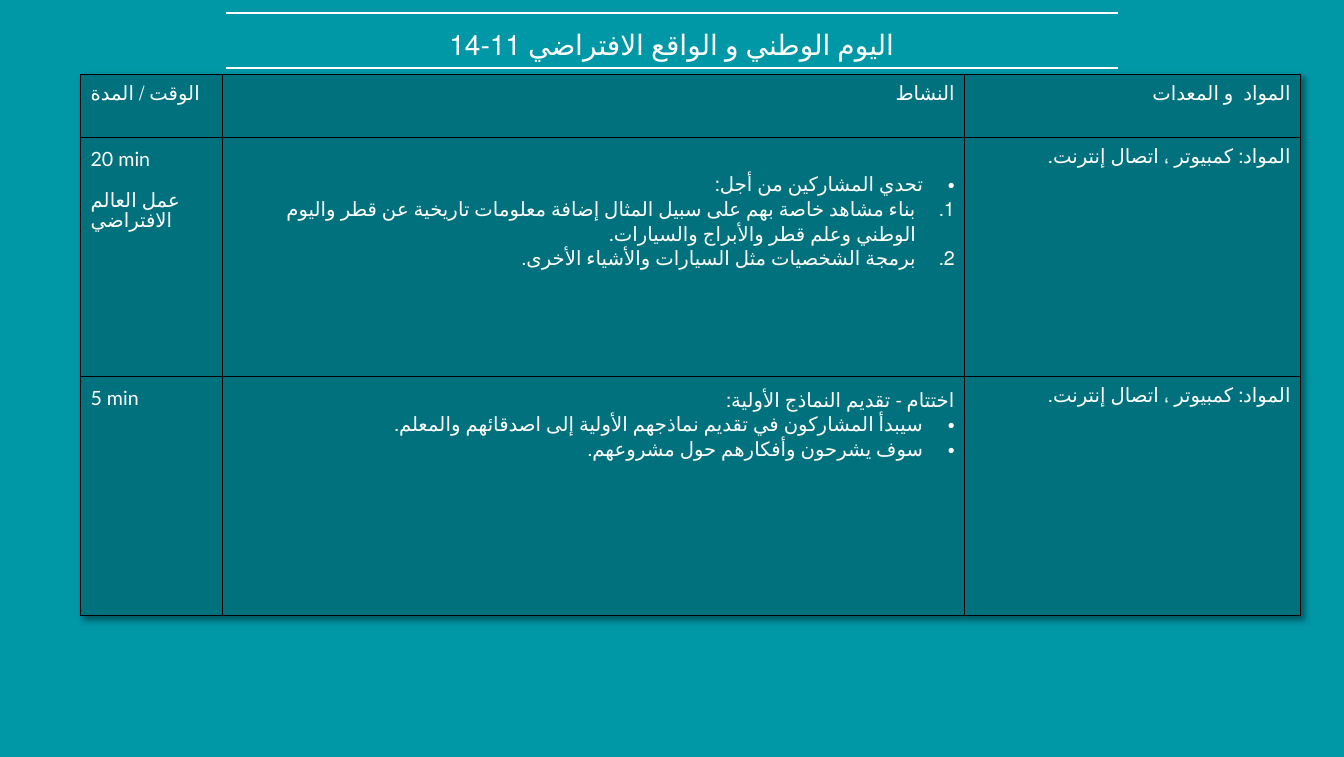
import pptx
import pptx.dml.color
import pptx.enum.shapes
import pptx.enum.text
import pptx.oxml
import pptx.oxml.ns
import pptx.util

Cm = pptx.util.Cm
Pt = pptx.util.Pt
ALIGN = pptx.enum.text.PP_ALIGN
TEAL = pptx.dml.color.RGBColor(0x00, 0x97, 0xA7)
DARK_TEAL = pptx.dml.color.RGBColor(0x00, 0x71, 0x7D)
WHITE = pptx.dml.color.RGBColor(0xFF, 0xFF, 0xFF)
BLACK = pptx.dml.color.RGBColor(0x00, 0x00, 0x00)

BULLET = ('<a:buFont {ns} typeface="Arial"/>', '<a:buChar {ns} char="•"/>')
NUMBER = ('<a:buFont {ns} typeface="Arial"/>', '<a:buAutoNum {ns} type="arabicPeriod"/>')
MARKERS = {"bullet": (BULLET, Cm(0.79)), "number": (NUMBER, Cm(0.97))}
MATERIALS = "المواد: كمبيوتر ، اتصال إنترنت."
HEADINGS = ("الوقت / المدة", "النشاط", "المواد  و المعدات")
SESSIONS = (
    (
        ("20 min", "عمل العالم الافتراضي"),
        (
            ("bullet", "تحدي المشاركين من أجل:"),
            ("number", "بناء مشاهد خاصة بهم على سبيل المثال إضافة معلومات تاريخية عن قطر واليوم "
                       "الوطني وعلم قطر والأبراج والسيارات."),
            ("number", "برمجة الشخصيات مثل السيارات والأشياء الأخرى."),
        ),
        Cm(0.85),
    ),
    (
        ("5 min",),
        (
            (None, "اختتام - تقديم النماذج الأولية:"),
            ("bullet", "سيبدأ المشاركون في تقديم نماذجهم الأولية إلى اصدقائهم والمعلم."),
            ("bullet", "سوف يشرحون وأفكارهم حول مشروعهم."),
        ),
        Cm(0.25),
    ),
)


def make_element(template):
    """Return an XML element in the drawing namespace."""
    return pptx.oxml.parse_xml(template.format(ns=pptx.oxml.ns.nsdecls("a")))


def write_paragraph(paragraph, text, size, font_name="Arial"):
    """Put white text in a paragraph."""
    paragraph.text = text
    for run in paragraph.runs:
        run.font.size = Pt(size)
        run.font.name = font_name
        run.font.color.rgb = WHITE
        run.font._element.set("lang", "ar")


def write_right_to_left(paragraph, text, marker=None):
    """Put right-to-left text in a paragraph, with an optional list marker."""
    properties = paragraph._p.get_or_add_pPr()
    properties.set("rtl", "1")
    properties.set("marR", "0")
    paragraph.alignment = ALIGN.RIGHT
    if marker:
        elements, indent = MARKERS[marker]
        properties.set("marL", str(indent))
        properties.set("indent", str(-indent))
        for element in elements:
            properties.append(make_element(element))
    write_paragraph(paragraph, text, 14)


def cell_paragraphs(cell, count):
    """Return the given number of paragraphs from an empty cell."""
    frame = cell.text_frame
    return [frame.paragraphs[0]] + [frame.add_paragraph() for _ in range(count - 1)]


def style_cell(cell):
    """Give a cell its margins, borders and fill."""
    cell.margin_left = cell.margin_right = cell.margin_top = cell.margin_bottom = Cm(0.25)
    properties = cell._tc.get_or_add_tcPr()
    for side in ("lnL", "lnR", "lnT", "lnB"):
        properties.append(make_element(
            f'<a:{side} {{ns}} w="{Pt(1)}"><a:solidFill><a:srgbClr val="{BLACK}"/>'
            f'</a:solidFill></a:{side}>'))
    cell.fill.solid()
    cell.fill.fore_color.rgb = DARK_TEAL


def add_title(slide, left, top, width, height):
    """Add the centred title between two horizontal rules."""
    box = slide.shapes.add_textbox(left, top, width, height)
    frame = box.text_frame
    frame.word_wrap = True
    frame.margin_left = frame.margin_right = frame.margin_top = frame.margin_bottom = Cm(0.33)
    frame.paragraphs[0].alignment = ALIGN.CENTER
    write_paragraph(frame.paragraphs[0], "اليوم الوطني و الواقع الافتراضي 11-14", 20, "Lato")
    inset = Cm(0.31)
    for rule_top in (top - Cm(0.03), top + Cm(1.35)):
        rule = slide.shapes.add_connector(
            pptx.enum.shapes.MSO_CONNECTOR.STRAIGHT,
            left + inset, rule_top, left + width - inset, rule_top)
        rule.line.color.rgb = WHITE
        rule.line.width = Pt(1.5)
        rule._element.spPr.append(make_element("<a:effectLst {ns}/>"))


def add_schedule(slide, left, top, width, height):
    """Add the table of times, activities and materials."""
    table = slide.shapes.add_table(3, 3, left, top, width, height).table
    table.first_row = table.horz_banding = False
    table._tbl.tblPr.insert(0, make_element(
        '<a:effectLst {ns}><a:outerShdw blurRad="50800" dist="38100" dir="2700000" algn="tl" '
        'rotWithShape="0"><a:prstClr val="black"><a:alpha val="40000"/></a:prstClr>'
        '</a:outerShdw></a:effectLst>'))
    time_width, materials_width = Cm(3.57), Cm(8.46)
    widths = (time_width, width - time_width - materials_width, materials_width)
    for column, column_width in zip(table.columns, widths):
        column.width = column_width
    heading_height = Cm(1.58)
    session_height = (height - heading_height) // 2
    for row, row_height in zip(table.rows, (heading_height, session_height, session_height)):
        row.height = row_height
    for cell in table.iter_cells():
        style_cell(cell)

    write_paragraph(table.cell(0, 0).text_frame.paragraphs[0], HEADINGS[0], 14)
    for column in (1, 2):
        write_right_to_left(table.cell(0, column).text_frame.paragraphs[0], HEADINGS[column])
    for row, (times, activities, activity_margin) in enumerate(SESSIONS, 1):
        time_cell, activity_cell, materials_cell = table.rows[row].cells
        for index, paragraph in enumerate(cell_paragraphs(time_cell, len(times))):
            if index:
                paragraph.space_before = Pt(15)
            write_paragraph(paragraph, times[index], 14, "Lato")
        activity_cell.margin_top = activity_margin
        paragraphs = cell_paragraphs(activity_cell, len(activities))
        for paragraph, (marker, text) in zip(paragraphs, activities):
            write_right_to_left(paragraph, text, marker)
            paragraph.line_spacing = 1.25
        write_right_to_left(materials_cell.text_frame.paragraphs[0], MATERIALS)


def main():
    """Build and save the schedule slide."""
    presentation = pptx.Presentation()
    presentation.slide_width = Cm(33.83)
    presentation.slide_height = Cm(19.05)
    slide = presentation.slides.add_slide(presentation.slide_layouts[6])
    slide.background.fill.solid()
    slide.background.fill.fore_color.rgb = TEAL
    add_title(slide, Cm(5.38), Cm(0.36), Cm(23.06), Cm(2.39))
    add_schedule(slide, Cm(2.03), Cm(1.88), Cm(30.71), Cm(13.61))
    presentation.save("out.pptx")


if __name__ == "__main__":
    main()
